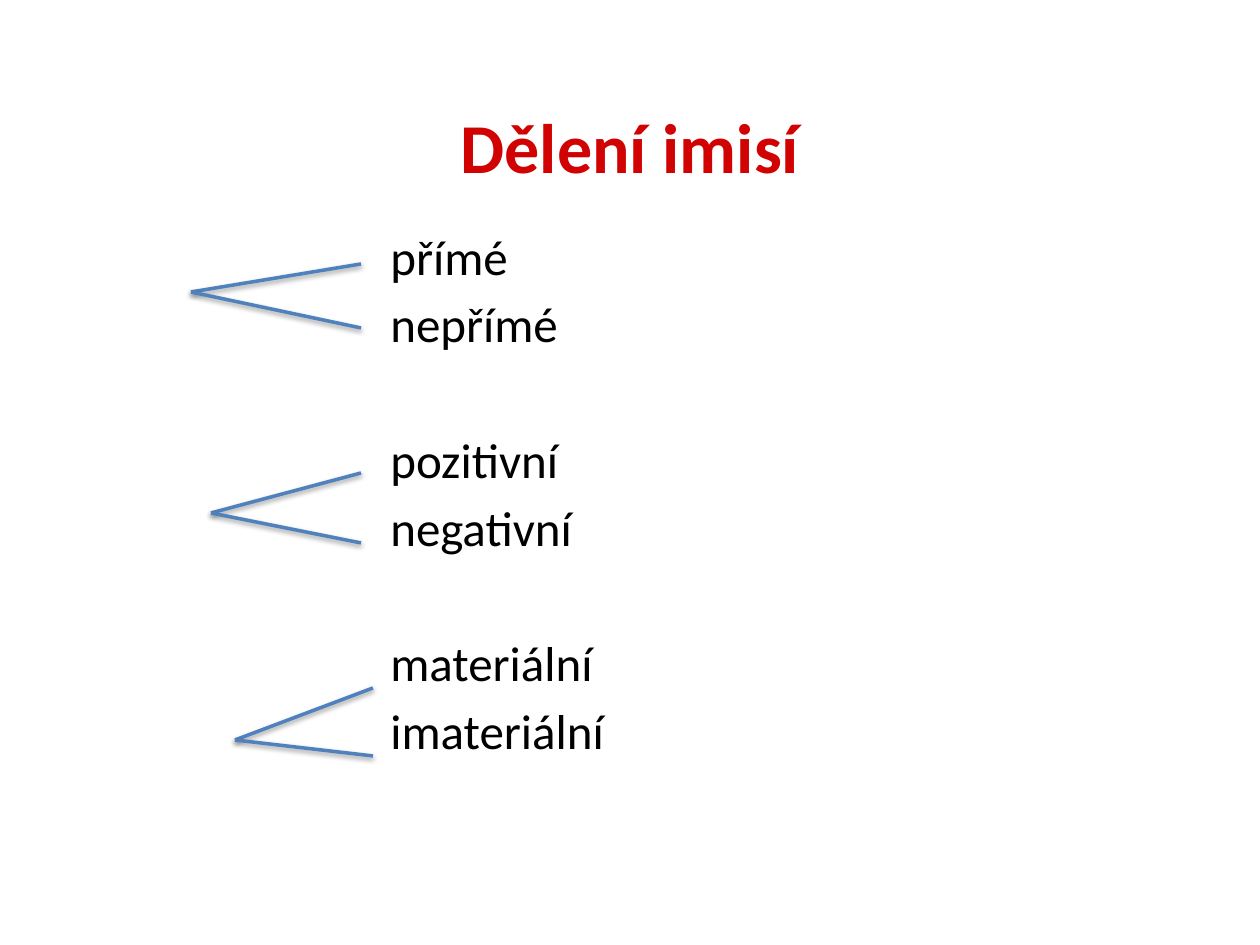
from lxml import etree
from pptx import Presentation, util as u
from pptx.dml.color import RGBColor
from pptx.enum import shapes, text
from pptx.oxml import parse_xml

PX = 914400 // 126
SHADOW = (
    '<a:effectLst xmlns:a="http://schemas.openxmlformats.org/drawingml/2006/main">'
    '<a:outerShdw blurRad="39370" dist="20320" dir="5400000" rotWithShape="0">'
    '<a:srgbClr val="000000"><a:alpha val="38000"/></a:srgbClr>'
    '</a:outerShdw></a:effectLst>'
)


def rgb(value):
    return RGBColor.from_string(value)


def add_text(left, top, width, height, size, color):
    sp = s.shapes.add_textbox(left * PX, top * PX, width * PX, height * PX)
    tf = sp.text_frame
    tf.word_wrap = True
    p = tf.paragraphs[0]
    p.font.name = "Calibri"
    p.font.size = u.Pt(size)
    p.font.color.rgb = rgb(color)
    return tf


prs = Presentation()
prs.slide_width = u.Inches(10)
prs.slide_height = u.Inches(7.5)
s = prs.slides.add_slide(prs.slide_layouts[6])

tf = add_text(63, 96, 1134, 100, 40, "D10202")
tf.vertical_anchor = text.MSO_ANCHOR.MIDDLE
p = tf.paragraphs[0]
p.text = "Dělení imisí"
p.font.bold = True
p.alignment = text.PP_ALIGN.CENTER

pairs = [
    ("přímé", "nepřímé"),
    ("pozitivní", "negativní"),
    ("materiální", "imateriální"),
]
tf = add_text(63, 220, 1134, 624, 28, "000000")
for i, pair in enumerate(pairs):
    for j, word in enumerate(pair):
        p = tf.paragraphs[0] if i == j == 0 else tf.add_paragraph()
        p.text = word
        p.font.name = "Calibri"
        p.font.size = u.Pt(28)
        p.font.color.rgb = rgb("000000")
        p.space_before = u.Pt(44 if i and j == 0 else 5)
        p._p.get_or_add_pPr().set("marL", str(315 * PX))

forks = [
    (191, 292, 361, (264, 328)),
    (211, 513, 361, (473, 543)),
    (235, 740, 373, (688, 756)),
]
for x, y, end_x, ends in forks:
    for end_y in ends:
        sp = s.shapes.add_connector(
            shapes.MSO_CONNECTOR.STRAIGHT, x * PX, y * PX, end_x * PX, end_y * PX
        )
        sp.line.color.rgb = rgb("4F81BD")
        sp.line.width = u.Pt(2)
        sp._element.spPr.append(parse_xml(SHADOW))

prs.save("out.pptx")
